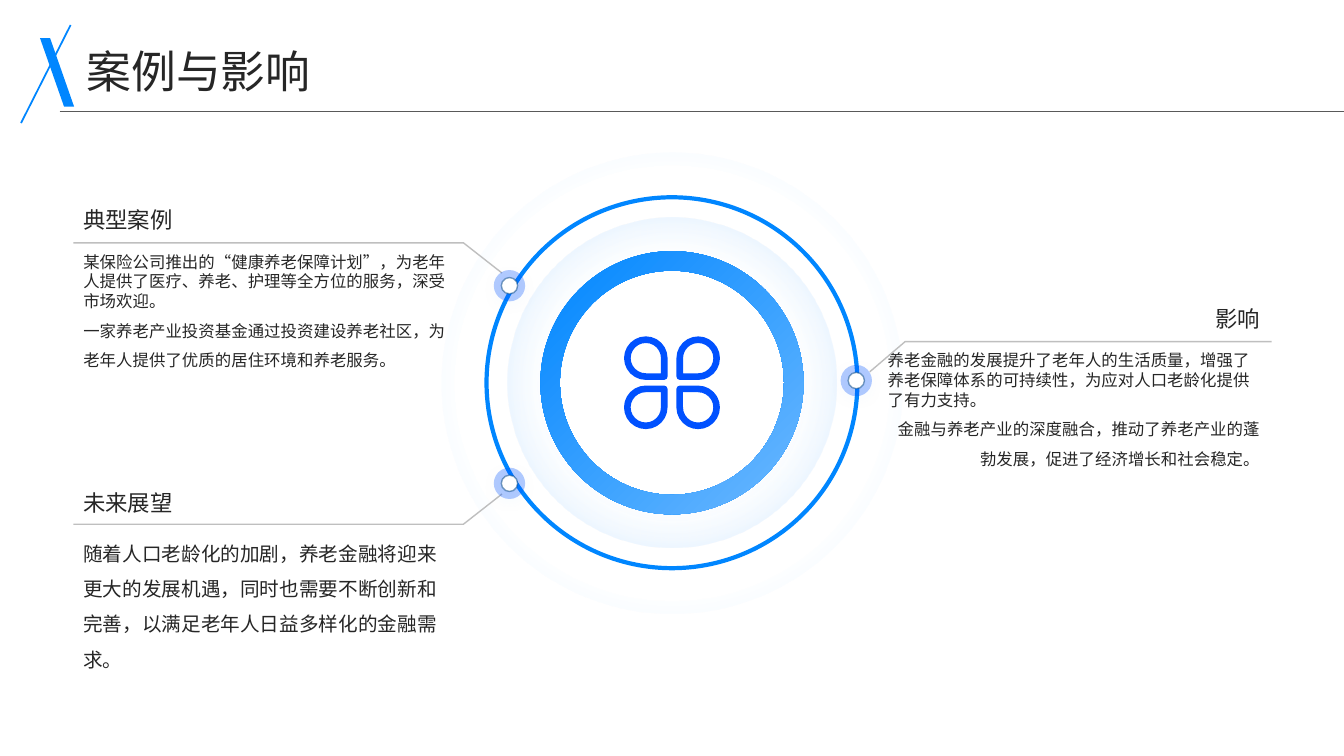
from dataclasses import dataclass
from lxml.etree import SubElement
from pptx import Presentation
from pptx.dml.color import RGBColor
from pptx.enum.shapes import MSO_CONNECTOR, MSO_SHAPE
from pptx.enum.text import MSO_ANCHOR, MSO_AUTO_SIZE, PP_ALIGN
from pptx.oxml import parse_xml
from pptx.oxml.ns import nsdecls, qn
from pptx.util import Cm, Pt


@dataclass(frozen=True)
class Theme:
    """Hold the colours, font and type sizes of the slide."""
    font: str = "Noto Sans CJK SC"
    ink: str = "262626"
    blue: str = "0086FF"
    pale: str = "66B6FF"
    deep: str = "0051FF"
    navy: str = "004380"
    grey: str = "BFBFBF"
    rule: str = "595959"
    white: str = "FFFFFF"
    title: float = 32
    head: float = 16
    body: float = 14
    small: float = 11.7


THEME = Theme()


def tint(fill, color, alpha=100):
    """Make a fill solid, see-through when alpha is below 100."""
    fill.solid()
    fill.fore_color.rgb = RGBColor.from_string(color)
    if alpha < 100:
        mark = fill._xPr.find(qn("a:solidFill"))[0]
        SubElement(mark, qn("a:alpha")).set("val", str(alpha * 1000))


def blend(shape, stops, shade):
    """Fill a shape with a gradient of (place, colour, alpha) stops."""
    marks = "".join(
        f'<a:gs pos="{pos * 1000}"><a:srgbClr val="{color}">'
        f'<a:alpha val="{alpha * 1000}"/></a:srgbClr></a:gs>'
        for pos, color, alpha in stops)
    shape.fill.background()
    props = shape._element.spPr
    props.replace(props.find(qn("a:noFill")), parse_xml(
        f'<a:gradFill {nsdecls("a")} rotWithShape="1">'
        f'<a:gsLst>{marks}</a:gsLst>{shade}</a:gradFill>'))


def glow(shape):
    """Give a shape a soft blue shadow below it."""
    props = shape._element.spPr
    props.remove(props.find(qn("a:effectLst")))
    props.append(parse_xml(
        f'<a:effectLst {nsdecls("a")}><a:outerShdw blurRad="{Pt(15)}" '
        f'dist="{Pt(3)}" dir="5400000" algn="t" rotWithShape="0">'
        f'<a:srgbClr val="{THEME.blue}"><a:alpha val="10000"/></a:srgbClr>'
        '</a:outerShdw></a:effectLst>'))


def stroke(shape, color, width, alpha=100):
    """Draw the outline of a shape."""
    shape.line.width = Pt(width)
    tint(shape.line.fill, color, alpha)


def plain(shapes, kind, x, y, wide, high):
    """Add a shape with no fill, line or shadow."""
    shape = shapes.add_shape(kind, Cm(x), Cm(y), Cm(wide), Cm(high))
    shape.shadow.inherit = False
    shape.fill.background()
    shape.line.fill.background()
    return shape


def round_at(shapes, x, y, size, kind=MSO_SHAPE.OVAL):
    """Add a square-boxed shape centred on a point."""
    return plain(shapes, kind, x - size / 2, y - size / 2, size, size)


def disc(shapes, x, y, size):
    """Add a white disc with a thin rim and a glow."""
    shape = round_at(shapes, x, y, size)
    tint(shape.fill, THEME.white)
    stroke(shape, THEME.navy, 1, 50)
    glow(shape)


def line(shapes, ends, color, width):
    """Add a straight line between two points."""
    link = shapes.add_connector(MSO_CONNECTOR.STRAIGHT, *map(Cm, ends))
    stroke(link, color, width)
    SubElement(link._element.spPr, qn("a:effectLst"))


def style(para, size, space=1.0, align=PP_ALIGN.LEFT):
    """Format one paragraph."""
    para.alignment = align
    para.line_spacing = space
    para.space_before = Pt(0)
    font = para.font
    font.size = Pt(size)
    font.bold = False
    font.color.rgb = RGBColor.from_string(THEME.ink)
    font.name = THEME.font
    props = para._p.pPr.find(qn("a:defRPr"))
    SubElement(props, qn("a:ea")).set("typeface", THEME.font)


def write(shapes, box, lines, anchor=MSO_ANCHOR.TOP):
    """Add a text box of (text, size, spacing, alignment) lines."""
    frame = shapes.add_textbox(*map(Cm, box)).text_frame
    frame.word_wrap = True
    frame.vertical_anchor = anchor
    for at, (text, *look) in enumerate(lines):
        para = frame.add_paragraph() if at else frame.paragraphs[0]
        para.text = text
        style(para, *look)


def header(slide, x, y, wide, high, text):
    """Place the title with its slashed mark and rule."""
    shapes = slide.shapes
    title = shapes.title
    title.left, title.top = Cm(x + 1.65), Cm(y + 0.48)
    title.width, title.height = Cm(29.82), Cm(1.19)
    frame = title.text_frame
    frame.auto_size = MSO_AUTO_SIZE.NONE
    frame.vertical_anchor = MSO_ANCHOR.MIDDLE
    frame.margin_left = frame.margin_right = 0
    frame.margin_top = frame.margin_bottom = 0
    frame.text = text
    style(frame.paragraphs[0], THEME.title, 1.1)
    slash = plain(shapes, MSO_SHAPE.PARALLELOGRAM, x + 0.48, y + 0.33, 0.86, 1.73)
    slash.adjustments[0] = 0.705
    slash._element.spPr.xfrm.set("flipH", "1")
    tint(slash.fill, THEME.blue)
    line(shapes, (x + 1.25, y, x, y + high), THEME.blue, 1.25)
    line(shapes, (x + 0.97, y + 2.18, x + wide, y + 2.18), THEME.rule, 0.75)


def rings(shapes, x, y, size):
    """Place the nested rings and the four-petal icon in a square box."""
    x, y = x + size / 2, y + size / 2
    core = ('<a:path path="circle"><a:fillToRect l="50000" t="50000" '
            'r="50000" b="50000"/></a:path>')
    blue = THEME.blue
    blend(round_at(shapes, x, y, size), [(66, blue, 0), (100, blue, 10)], core)
    stroke(round_at(shapes, x, y, size * 0.805), blue, 3)
    blend(round_at(shapes, x, y, size * 0.715), [(56, blue, 0), (100, blue, 20)], core)
    disc(shapes, x, y, size * 0.505)
    band = round_at(shapes, x, y, size * 0.571, MSO_SHAPE.DONUT)
    band.adjustments[0] = 0.074
    blend(band, [(0, blue, 100), (95, THEME.pale, 100)],
          '<a:lin ang="2700000" scaled="0"/>')
    for turn, (across, down) in enumerate([(-1, 1), (-1, -1), (1, -1), (1, 1)]):
        petal = round_at(shapes, x + across * 0.66, y + down * 0.62, 0.93,
                         MSO_SHAPE.TEAR)
        petal.rotation = turn * 90
        stroke(petal, THEME.deep, 4.7)


def note(shapes, x, y, wide, head, lines, align, drop, trail, knob):
    """Place a heading, its body, and a leader that ends in a knob."""
    write(shapes, (x, y, wide, 2.01), [(head, THEME.head, 1.0, align)],
          MSO_ANCHOR.BOTTOM)
    write(shapes, (x, y + drop, wide, 4.29), lines)
    start, *rest = [(Cm(x + across), Cm(y + down)) for across, down in trail]
    pen = shapes.build_freeform(*start)
    pen.add_line_segments(rest, close=False)
    path = pen.convert_to_shape()
    path.shadow.inherit = False
    path.fill.background()
    stroke(path, THEME.grey, 1)
    across, down = knob
    halo = round_at(shapes, x + across, y + down, 0.79)
    tint(halo.fill, THEME.deep, 30)
    disc(shapes, x + across, y + down, 0.41)


def main():
    """Build the slide and save it."""
    deck = Presentation()
    deck.slide_width, deck.slide_height = Cm(33.87), Cm(19.05)
    slide = deck.slides.add_slide(deck.slide_layouts[5])
    shapes = slide.shapes
    left, right = PP_ALIGN.LEFT, PP_ALIGN.RIGHT
    small, body = THEME.small, THEME.body
    header(slide, 0.53, 0.63, 33.34, 2.47, "案例与影响")
    rings(shapes, 11.13, 3.84, 11.61)
    note(shapes, 1.85, 3.99, 9.88, "典型案例", [
        ("某保险公司推出的“健康养老保障计划”，为老年人提供了医疗、养老、护理等全方位的服务，深受市场欢迎。", small, 1.0, left),
        ("一家养老产业投资基金通过投资建设养老社区，为老年人提供了优质的居住环境和养老服务。", small, 1.5, left),
    ], left, 2.23, [(0, 2.13), (9.83, 2.13), (10.8, 2.89)], (10.99, 3.21))
    note(shapes, 1.85, 11.13, 9.88, "未来展望", [
        ("随着人口老龄化的加剧，养老金融将迎来更大的发展机遇，同时也需要不断创新和完善，以满足老年人日益多样化的金融需求。", body, 1.5, left),
    ], left, 2.1, [(0, 2.08), (9.83, 2.08), (10.8, 1.32)], (10.99, 1.05))
    note(shapes, 22.12, 6.48, 9.88, "影响", [
        ("养老金融的发展提升了老年人的生活质量，增强了养老保障体系的可持续性，为应对人口老龄化提供了有力支持。", small, 1.0, left),
        ("金融与养老产业的深度融合，推动了养老产业的蓬勃发展，促进了经济增长和社会稳定。", small, 1.5, right),
    ], right, 2.23, [(9.93, 2.13), (0.69, 2.13), (-0.2, 2.89)], (-0.54, 3.11))
    deck.save("out.pptx")


if __name__ == "__main__":
    main()
